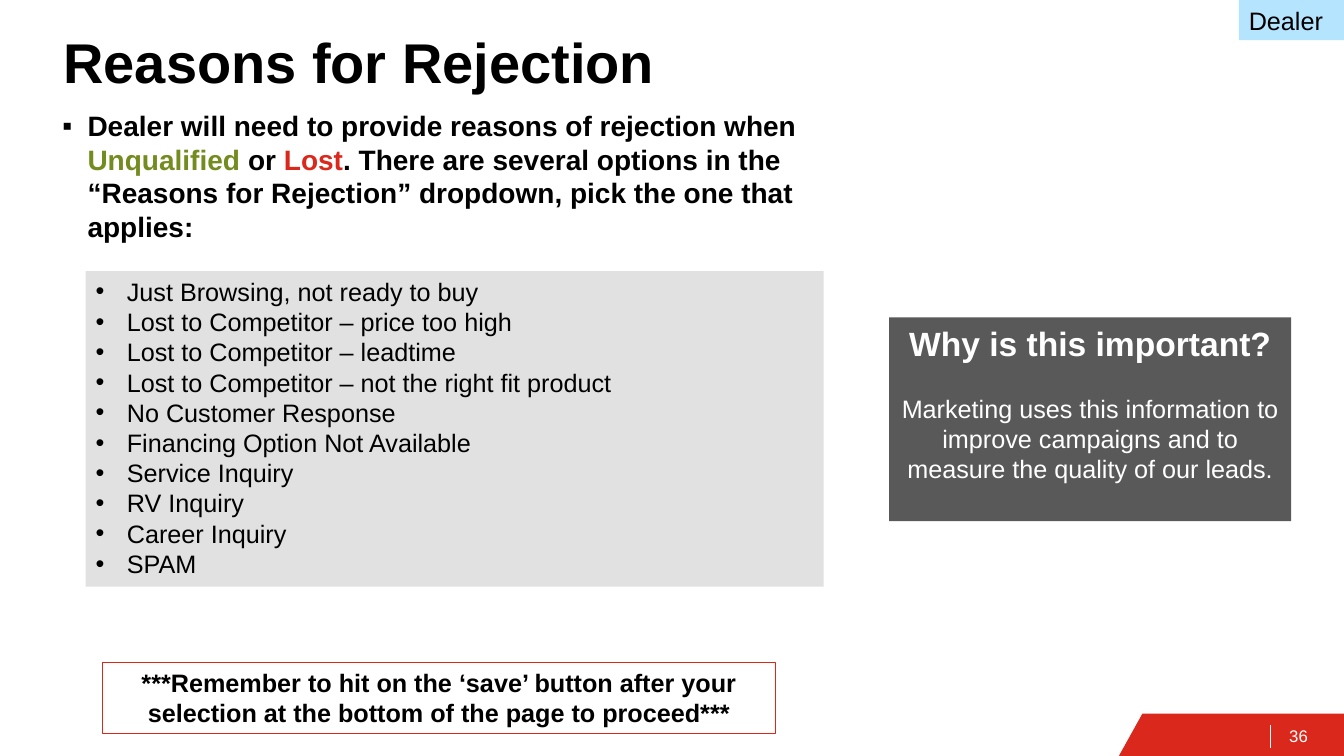
import pptx
import pptx.dml.color
import pptx.enum.shapes
import pptx.enum.text
import pptx.util
from lxml import etree
from pptx.oxml.ns import qn

WIDTH = pptx.util.Inches(13.333)
HEIGHT = pptx.util.Inches(7.5)
FONT = "Arial"
BLACK, WHITE, RED, GREEN = "000000", "FFFFFF", "DA281C", "738B1F"
DARK_GREY, LIGHT_GREY, LIGHT_BLUE = "595959", "E1E1E1", "B5E4FF"
LINE_FACTOR = 1.2

REASONS = [
    "Just Browsing, not ready to buy",
    "Lost to Competitor – price too high",
    "Lost to Competitor – leadtime",
    "Lost to Competitor – not the right fit product",
    "No Customer Response",
    "Financing Option Not Available",
    "Service Inquiry",
    "RV Inquiry",
    "Career Inquiry",
    "SPAM",
]


def color(value):
    return pptx.dml.color.RGBColor.from_string(value)


def across(percent):
    return round(WIDTH * percent / 100)


def down(percent):
    return round(HEIGHT * percent / 100)


def area(left, top, width, height):
    return across(left), down(top), across(width), down(height)


def add_panel(slide, bounds, fill=None, line=None):
    shape = slide.shapes.add_shape(
        pptx.enum.shapes.MSO_SHAPE.RECTANGLE, *area(*bounds))
    shape.shadow.inherit = False
    if fill:
        shape.fill.solid()
        shape.fill.fore_color.rgb = color(fill)
    else:
        shape.fill.background()
    if line:
        shape.line.color.rgb = color(line)
        shape.line.width = pptx.util.Pt(0.75)
    else:
        shape.line.fill.background()
    return prepare_frame(shape)


def add_label(slide, bounds):
    return prepare_frame(slide.shapes.add_textbox(*area(*bounds)))


def prepare_frame(shape):
    frame = shape.text_frame
    frame.word_wrap = True
    frame.vertical_anchor = pptx.enum.text.MSO_ANCHOR.TOP
    return frame


def add_bullet(paragraph, symbol, indent):
    properties = paragraph._p.get_or_add_pPr()
    properties.set("marL", str(pptx.util.Inches(indent)))
    properties.set("indent", str(-pptx.util.Inches(indent)))
    etree.SubElement(properties, qn("a:buFont")).set("typeface", FONT)
    etree.SubElement(properties, qn("a:buChar")).set("char", symbol)


def write(paragraph, runs, size, bold=False, centered=False):
    alignment = pptx.enum.text.PP_ALIGN
    paragraph.alignment = alignment.CENTER if centered else alignment.LEFT
    paragraph.line_spacing = pptx.util.Pt(size * LINE_FACTOR)
    for text, text_color in runs:
        run = paragraph.add_run()
        run.text = text
        run.font.name = FONT
        run.font.size = pptx.util.Pt(size)
        run.font.bold = bold
        run.font.color.rgb = color(text_color)


def add_footer(slide):
    builder = slide.shapes.build_freeform(across(83.25), HEIGHT)
    builder.add_line_segments([
        (across(85), down(94.4)), (WIDTH, down(94.4)), (WIDTH, HEIGHT)])
    band = builder.convert_to_shape()
    band.shadow.inherit = False
    band.fill.solid()
    band.fill.fore_color.rgb = color(RED)
    band.line.fill.background()

    divider = slide.shapes.add_connector(
        pptx.enum.shapes.MSO_CONNECTOR.STRAIGHT,
        across(94.5), down(95.87), across(94.5), down(98.93))
    divider.line.color.rgb = color(WHITE)
    divider.line.width = pptx.util.Pt(0.75)
    etree.SubElement(divider._element.spPr, qn("a:effectLst"))

    number = add_label(slide, (94.95, 94.67, 5.03, 5.33))
    number.margin_left = number.margin_right = pptx.util.Inches(0.13)
    number.vertical_anchor = pptx.enum.text.MSO_ANCHOR.MIDDLE
    write(number.paragraphs[0], [("36", WHITE)], 12)


def add_introduction(slide):
    title = add_label(slide, (3.98, 2.93, 89.33, 12.13))
    write(title.paragraphs[0], [("Reasons for Rejection", BLACK)], 40, bold=True)

    paragraph = add_label(slide, (3.9, 13.73, 57, 19.33)).paragraphs[0]
    add_bullet(paragraph, "▪", 0.25)
    write(paragraph, [
        ("Dealer will need to provide reasons of rejection when ", BLACK),
        ("Unqualified", GREEN),
        (" or ", BLACK),
        ("Lost", RED),
        (". There are several options in the “Reasons for Rejection” "
         "dropdown, pick the one that applies:", BLACK),
    ], 20, bold=True)


def add_reasons(slide):
    frame = add_panel(slide, (6.38, 35.87, 54.9, 41.73), fill=LIGHT_GREY)
    frame.text = "\n".join([""] * len(REASONS))
    for paragraph, reason in zip(frame.paragraphs, REASONS):
        add_bullet(paragraph, "•", 0.31)
        write(paragraph, [(reason, BLACK)], 18)


def add_importance(slide):
    frame = add_panel(slide, (66.15, 42, 29.93, 26.93), fill=DARK_GREY)
    heading = frame.paragraphs[0]
    write(heading, [("Why is this important?", WHITE)], 24, True, True)
    heading.space_after = pptx.util.Pt(18 * LINE_FACTOR)
    write(frame.add_paragraph(), [(
        "Marketing uses this information to improve campaigns and to "
        "measure the quality of our leads.", WHITE)], 18, centered=True)


def main():
    presentation = pptx.Presentation()
    presentation.slide_width = WIDTH
    presentation.slide_height = HEIGHT
    slide = presentation.slides.add_slide(presentation.slide_layouts[6])

    add_footer(slide)
    add_introduction(slide)
    add_importance(slide)
    dealer = add_panel(slide, (92.18, 0, 7.82, 5.33), fill=LIGHT_BLUE)
    write(dealer.paragraphs[0], [("Dealer", BLACK)], 18)
    reminder = add_panel(slide, (7.65, 87.6, 50.03, 9.47), line=RED)
    write(reminder.paragraphs[0], [(
        "***Remember to hit on the ‘save’ button after your selection "
        "at the bottom of the page to proceed***", BLACK)], 18, True, True)
    add_reasons(slide)

    presentation.save("out.pptx")


if __name__ == "__main__":
    main()
